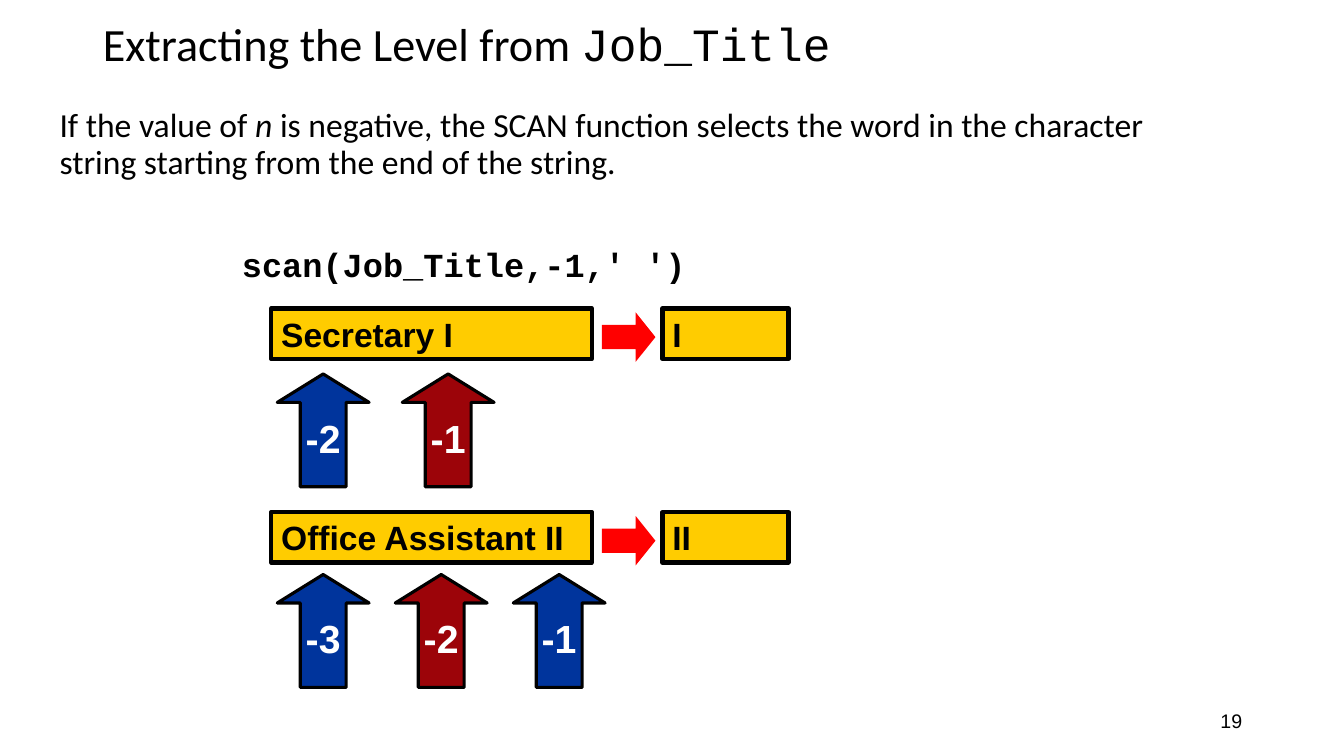
"""Build the slide on extracting the level from Job_Title."""
from dataclasses import dataclass

from lxml import etree
from pptx import Presentation
from pptx.dml.color import RGBColor
from pptx.enum.shapes import MSO_SHAPE
from pptx.enum.text import MSO_ANCHOR, MSO_AUTO_SIZE, PP_ALIGN
from pptx.oxml.ns import qn
from pptx.util import Inches, Pt

RECT, RIGHT, UP = MSO_SHAPE.RECTANGLE, MSO_SHAPE.RIGHT_ARROW, MSO_SHAPE.UP_ARROW
TOP, MIDDLE = MSO_ANCHOR.TOP, MSO_ANCHOR.MIDDLE
START, CENTER, END = PP_ALIGN.LEFT, PP_ALIGN.CENTER, PP_ALIGN.RIGHT
FIXED = MSO_AUTO_SIZE.NONE

WIDE, HIGH = Inches(13.33), Inches(7.5)
BLACK, WHITE, GOLD, BLUE, CRIMSON, RED = (
    "000000", "FFFFFF", "FFCC00", "00349C", "9C0409", "FF0000")
SANS, MONO, BODY = "Arial", "Courier New", "Calibri"


@dataclass
class Area:
    """A place on the slide, in percent of its width and height."""
    left: float
    top: float
    width: float
    height: float

    def lengths(self) -> tuple[int, int, int, int]:
        """Return left, top, width and height as slide lengths."""
        return (round(WIDE * self.left / 100), round(HIGH * self.top / 100),
                round(WIDE * self.width / 100), round(HIGH * self.height / 100))


@dataclass
class Sample:
    """A job title, the word picked from it and its numbered words."""
    title: str
    word: str
    top: float
    drop: float
    step: float
    marks: list[str]
    pick: int


SAMPLES = [
    Sample("Secretary I", "I", 40.8, 8.67, 9.3, ["-2", "-1"], 1),
    Sample("Office Assistant II", "II", 67.73, 8.27, 8.78, ["-3", "-2", "-1"], 1),
]


def color(value: str) -> RGBColor:
    """Turn a hex string into a colour."""
    return RGBColor.from_string(value)


def write(shape, text, *, size=24, font=SANS, ink=BLACK, bold=False,
          align=START, anchor=TOP, wrap=True, inset=None, space=None, before=0):
    """Write a string, or a list of (string, run format) pairs, in a shape."""
    frame = shape.text_frame
    frame.auto_size = FIXED
    frame.word_wrap = wrap
    frame.vertical_anchor = anchor
    if inset is not None:
        frame.margin_left = frame.margin_right = inset
        frame.margin_top = frame.margin_bottom = inset
    para = frame.paragraphs[0]
    para.alignment = align
    para.line_spacing = space
    para.space_before = Pt(before)
    for part, look in [(text, {})] if isinstance(text, str) else text:
        run = para.add_run()
        run.text = part
        run.font.size = Pt(size)
        run.font.name = look.get("font", font)
        run.font.bold = bold
        run.font.italic = look.get("italic", False)
        run.font.color.rgb = color(ink)
    return para


def place(shape, area: Area) -> None:
    """Move a placeholder to an area."""
    shape.left, shape.top, shape.width, shape.height = area.lengths()


def draw(slide, kind, area: Area, fill: str, line: float = 0, shares=()):
    """Draw a filled preset shape, with a black outline if line is set."""
    shape = slide.shapes.add_shape(kind, *area.lengths())
    shape.shadow.inherit = False
    shape.fill.solid()
    shape.fill.fore_color.rgb = color(fill)
    if line:
        shape.line.color.rgb = color(BLACK)
        shape.line.width = Pt(line)
    else:
        shape.line.fill.background()
    for index, share in enumerate(shares):
        shape.adjustments[index] = share
    return shape


def label(slide, area: Area, text: str, **look) -> None:
    """Add a text box."""
    write(slide.shapes.add_textbox(*area.lengths()), text, **look)


def show(slide, sample: Sample) -> None:
    """Draw one job title with its result and its word arrows."""
    for left, width, text in ((20.18, 23.85, sample.title), (49.29, 9.38, sample.word)):
        box = draw(slide, RECT, Area(left, sample.top, width, 6.67), GOLD, 3)
        write(box, text, bold=True)
    draw(slide, RIGHT, Area(44.79, sample.top + 0.53, 3.98, 6.53), RED, shares=(0.49, 0.4))
    for index, mark in enumerate(sample.marks):
        area = Area(20.63 + index * sample.step, sample.top + sample.drop, 6.83, 14.93)
        fill = CRIMSON if index == sample.pick else BLUE
        arrow = draw(slide, UP, area, fill, 2.25, (0.5, 0.31))
        write(arrow, mark, size=28, ink=WHITE, bold=True, align=CENTER,
              anchor=MIDDLE, wrap=False)


def main() -> None:
    """Build and save the slide."""
    deck = Presentation()
    deck.slide_width, deck.slide_height = WIDE, HIGH
    slide = deck.slides.add_slide(deck.slide_layouts[1])
    title, body = slide.placeholders
    place(title, Area(6.9, 0.4, 86.25, 11.6))
    write(title, [("Extracting the Level from ", {}), ("Job_Title", {"font": MONO})],
          size=33, font=BODY, anchor=MIDDLE, space=0.9)
    place(body, Area(3.68, 13.73, 86.25, 13.2))
    para = write(body, [
        ("If the value of ", {}), ("n", {"italic": True}),
        (" is negative, the SCAN function selects the word in the character "
         "string starting from the end of the string.", {}),
    ], font=BODY, space=0.9, before=7.5)
    props = para._p.get_or_add_pPr()
    props.set("marL", "0")
    props.set("indent", "0")
    etree.SubElement(props, qn("a:buNone"))
    label(slide, Area(70.67, 92.67, 22.5, 5.33), "19", size=14, align=END, anchor=MIDDLE)
    label(slide, Area(17.85, 32.27, 33.3, 5.33), "scan(Job_Title,-1,' ')",
          font=MONO, bold=True, align=CENTER, wrap=False, inset=0)
    for sample in SAMPLES:
        show(slide, sample)
    deck.save("out.pptx")


if __name__ == "__main__":
    main()
